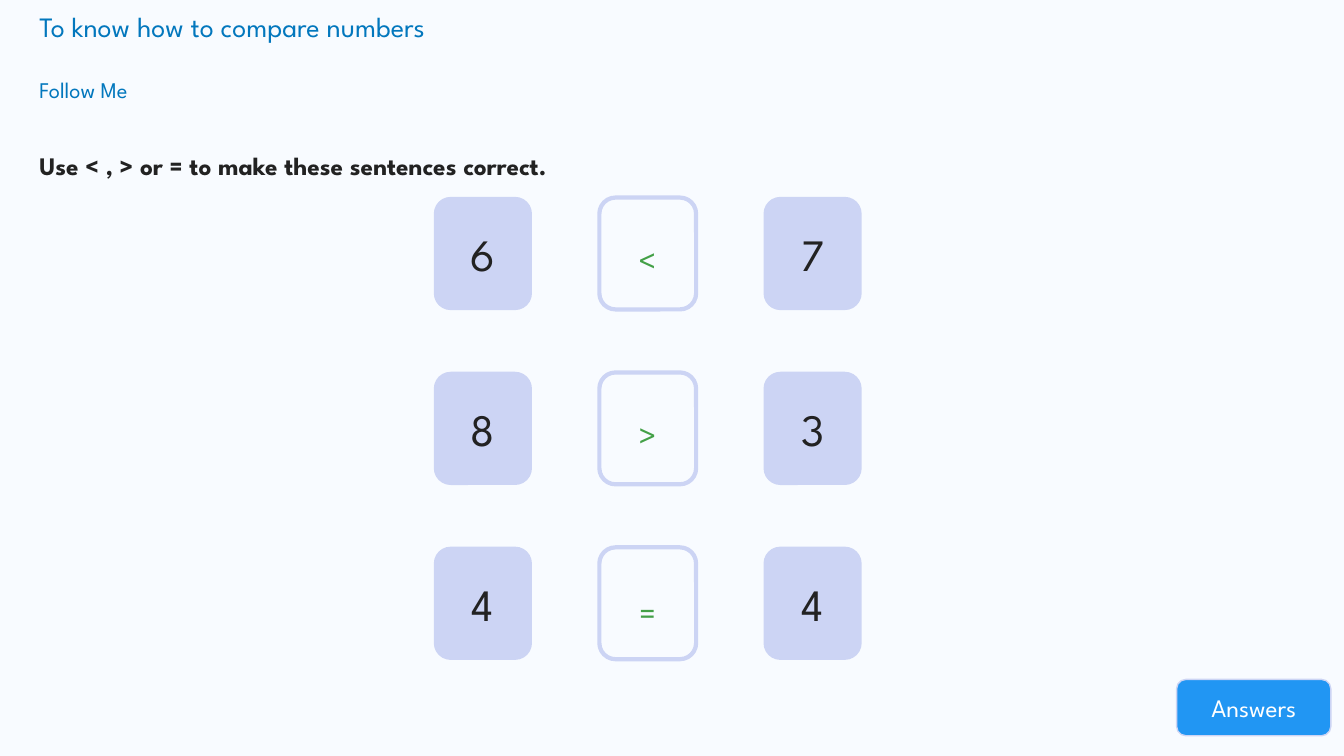
from pptx import Presentation
from pptx.dml.color import RGBColor
from pptx.enum.shapes import MSO_SHAPE
from pptx.enum.text import MSO_ANCHOR, MSO_AUTO_SIZE, PP_ALIGN
from pptx.util import Inches, Pt
from lxml.etree import SubElement
from pptx.oxml.ns import qn


def write(shape, text, size, color, align=PP_ALIGN.CENTER, anchor=MSO_ANCHOR.MIDDLE):
    frame = shape.text_frame
    frame.text = text
    frame.word_wrap = True
    frame.auto_size = MSO_AUTO_SIZE.NONE
    frame.vertical_anchor = anchor
    para = frame.paragraphs[0]
    para.alignment = align
    para.space_before = Pt(0)
    if shape.is_placeholder:
        props = para._p.get_or_add_pPr()
        props.set("marL", "0")
        props.set("indent", "0")
        SubElement(props, qn("a:buNone"))
    para.font.name = "League Spartan"
    para.font.size = Pt(size)
    para.font.color.rgb = RGBColor.from_string(color)
    return para


def card(left, top, width, height, fill, line):
    shape = slide.shapes.add_shape(
        MSO_SHAPE.ROUNDED_RECTANGLE, Inches(left), Inches(top), Inches(width), Inches(height))
    shape.adjustments[0] = 0.167
    shape.shadow.inherit = False
    if fill:
        shape.fill.solid()
        shape.fill.fore_color.rgb = RGBColor.from_string(fill)
    else:
        shape.fill.background()
    shape.line.color.rgb = RGBColor.from_string("CCD4F4")
    shape.line.width = Pt(line)
    return shape


deck = Presentation()
deck.slide_width = Inches(13.33)
deck.slide_height = Inches(7.5)
slide = deck.slides.add_slide(deck.slide_layouts[3])
slide.background.fill.solid()
slide.background.fill.fore_color.rgb = RGBColor.from_string("F8FBFF")

heads = [
    ("To know how to compare numbers", 0.04, 12.34, 0.44, 20, "0277BD"),
    ("Follow Me", 0.71, 2.97, 0.46, 16, "0277BD"),
    ("Use < , > or = to make these sentences correct.", 1.29, 12.84, 0.56, 18, "222222"),
]
for holder, (text, top, width, height, size, color) in zip(slide.placeholders, heads):
    holder.left, holder.top = Inches(0.29), Inches(top)
    holder.width, holder.height = Inches(width), Inches(height)
    para = write(holder, text, size, color, PP_ALIGN.LEFT, MSO_ANCHOR.TOP)
para.font.bold = True
para.line_spacing = 1.5

wide, high = 0.96, 1.11
left, top = 4.31, 1.96
step, pitch = 1.635, 1.735
sums = [("6", "<", "7", 0.36), ("8", ">", "3", 0.36), ("4", "=", "4", 0.39)]
for row, (first, sign, last, drop) in enumerate(sums):
    y = top + row * pitch
    for col, digit in ((0, first), (2, last)):
        tile = card(left + col * step, y, wide, high, "CCD4F4", 1)
        write(tile, digit, 32, "222222")
    card(left + step, y, wide, high, None, 3)
    box = slide.shapes.add_textbox(
        Inches(left + step), Inches(y + drop), Inches(wide), Inches(0.5))
    write(box, sign, 24, "43A047", anchor=MSO_ANCHOR.TOP)

button = card(11.67, 6.74, 1.53, 0.56, "2196F3", 1)
write(button, "Answers", 18, "FFFFFF")

deck.save("out.pptx")
